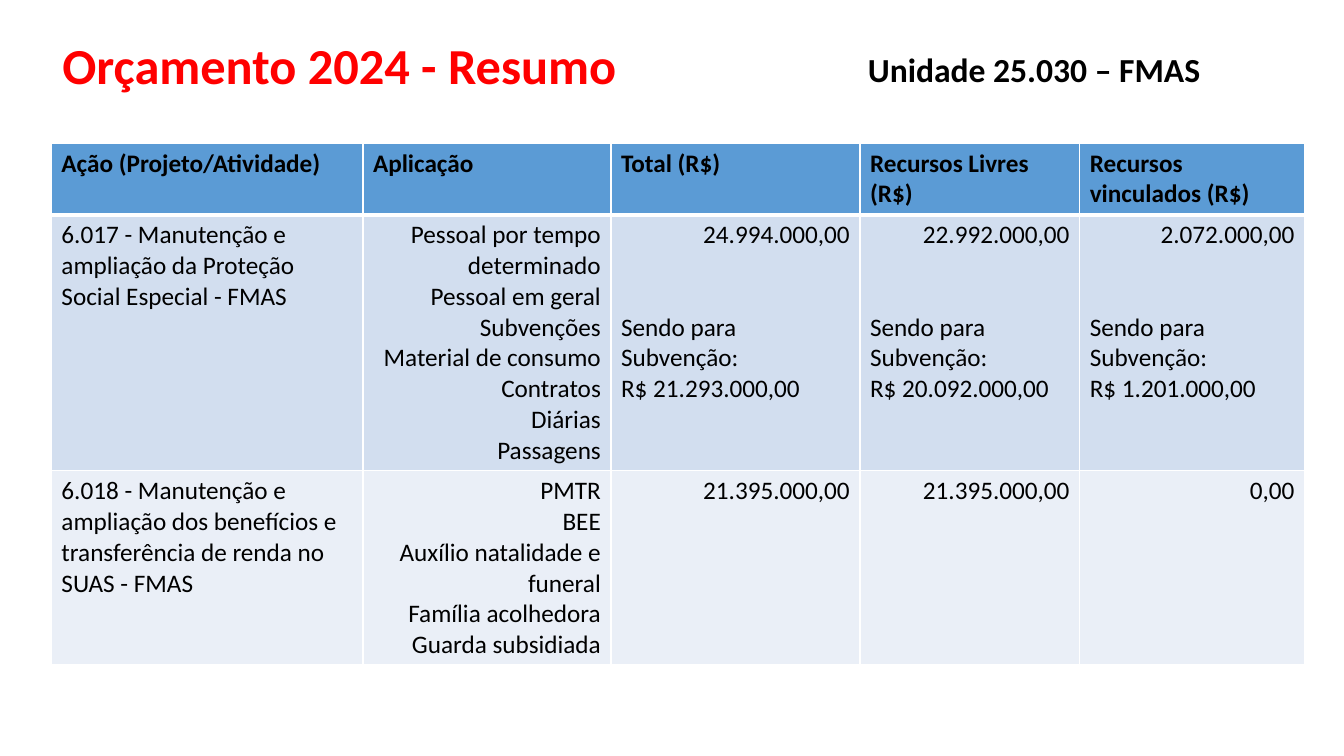
"""Build the 2024 budget summary slide."""
from lxml.etree import SubElement
from pptx import Presentation
from pptx.dml.color import RGBColor
from pptx.enum.text import MSO_ANCHOR, PP_ALIGN
from pptx.oxml.ns import qn
from pptx.util import Pt

SCALE = 9144
FONT = "Calibri"
BLACK = RGBColor(0, 0, 0)
WHITE = RGBColor(255, 255, 255)
RED = RGBColor(255, 0, 0)
BLUE = RGBColor(0x5B, 0x9B, 0xD5)
BANDS = [RGBColor(0xD2, 0xDE, 0xEF), RGBColor(0xEA, 0xEF, 0xF7)]
LEFT, RIGHT = PP_ALIGN.LEFT, PP_ALIGN.RIGHT

COLS = [309, 246, 247, 218, 223]
ROWS = [71, 254, 192]
HEADS = ["Ação (Projeto/Atividade)", "Aplicação", "Total (R$)",
         "Recursos Livres (R$)", "Recursos vinculados (R$)"]
ACTIONS = [
    ("6.017 - Manutenção e ampliação da Proteção Social Especial - FMAS",
     ["Pessoal por tempo determinado", "Pessoal em geral", "Subvenções",
      "Material de consumo", "Contratos", "Diárias", "Passagens"],
     ["24.994.000,00", "22.992.000,00", "2.072.000,00"],
     ["R$ 21.293.000,00", "R$ 20.092.000,00", "R$ 1.201.000,00"]),
    ("6.018 - Manutenção e ampliação dos benefícios e transferência de renda no SUAS - FMAS",
     ["PMTR", "BEE", "Auxílio natalidade e funeral", "Família acolhedora",
      "Guarda subsidiada"],
     ["21.395.000,00", "21.395.000,00", "0,00"],
     []),
]


def px(num):
    return num * SCALE


def add_run(para, text, size, color=BLACK, bold=False):
    run = para.add_run()
    run.text = text
    font = run.font
    font.name, font.size, font.bold = FONT, Pt(size), bold
    font.color.rgb = color


def add_label(slide, box, text, size, color, wrap):
    shape = slide.shapes.add_textbox(*map(px, box))
    frame = shape.text_frame
    frame.word_wrap = wrap
    frame.vertical_anchor = MSO_ANCHOR.MIDDLE
    para = frame.paragraphs[0]
    para.line_spacing = 0.9 if wrap else 1.0
    add_run(para, text, size, color, True)


def add_edge(cell, side, width):
    line = SubElement(cell._tc.get_or_add_tcPr(), qn(f"a:ln{side}"), w=str(Pt(width)))
    fill = SubElement(line, qn("a:solidFill"))
    SubElement(fill, qn("a:srgbClr"), val=str(WHITE))


def fill_cell(cell, lines, color, top=1, base=1, bold=False):
    for side, width in zip("LRTB", (1, 1, top, base)):
        add_edge(cell, side, width)
    cell.fill.solid()
    cell.fill.fore_color.rgb = color
    frame = cell.text_frame
    for num, (text, align, gap) in enumerate(lines):
        para = frame.add_paragraph() if num else frame.paragraphs[0]
        para.alignment = align
        para.space_before = Pt(gap)
        add_run(para, text, 18, bold=bold)


def list_cells(action):
    name, uses, sums, grants = action
    cells = [[(name, LEFT, 0)], [(use, RIGHT, 0) for use in uses]]
    cells += [[(total, RIGHT, 0)] for total in sums]
    for cell, grant in zip(cells[2:], grants):
        cell += [("Sendo para Subvenção:", LEFT, 44), (grant, LEFT, 0)]
    return cells


def add_budget(slide):
    table = slide.shapes.add_table(
        len(ROWS), len(COLS), px(51), px(142), px(sum(COLS)), px(sum(ROWS))).table
    for col, width in zip(table.columns, COLS):
        col.width = px(width)
    for row, height in zip(table.rows, ROWS):
        row.height = px(height)
    for col, head in enumerate(HEADS):
        fill_cell(table.cell(0, col), [(head, LEFT, 0)], BLUE, base=3, bold=True)
    for row, (action, color) in enumerate(zip(ACTIONS, BANDS), 1):
        for col, lines in enumerate(list_cells(action)):
            fill_cell(table.cell(row, col), lines, color, top=3 if row == 1 else 1)


def main():
    deck = Presentation()
    deck.slide_width, deck.slide_height = px(1333), px(750)
    slide = deck.slides.add_slide(deck.slide_layouts[6])
    add_label(slide, (52, -5, 1151, 145), "Orçamento 2024 - Resumo", 36, RED, True)
    add_budget(slide)
    add_label(slide, (851, 44, 353, 50), "Unidade 25.030 – FMAS", 24, BLACK, False)
    deck.save("out.pptx")


if __name__ == "__main__":
    main()
